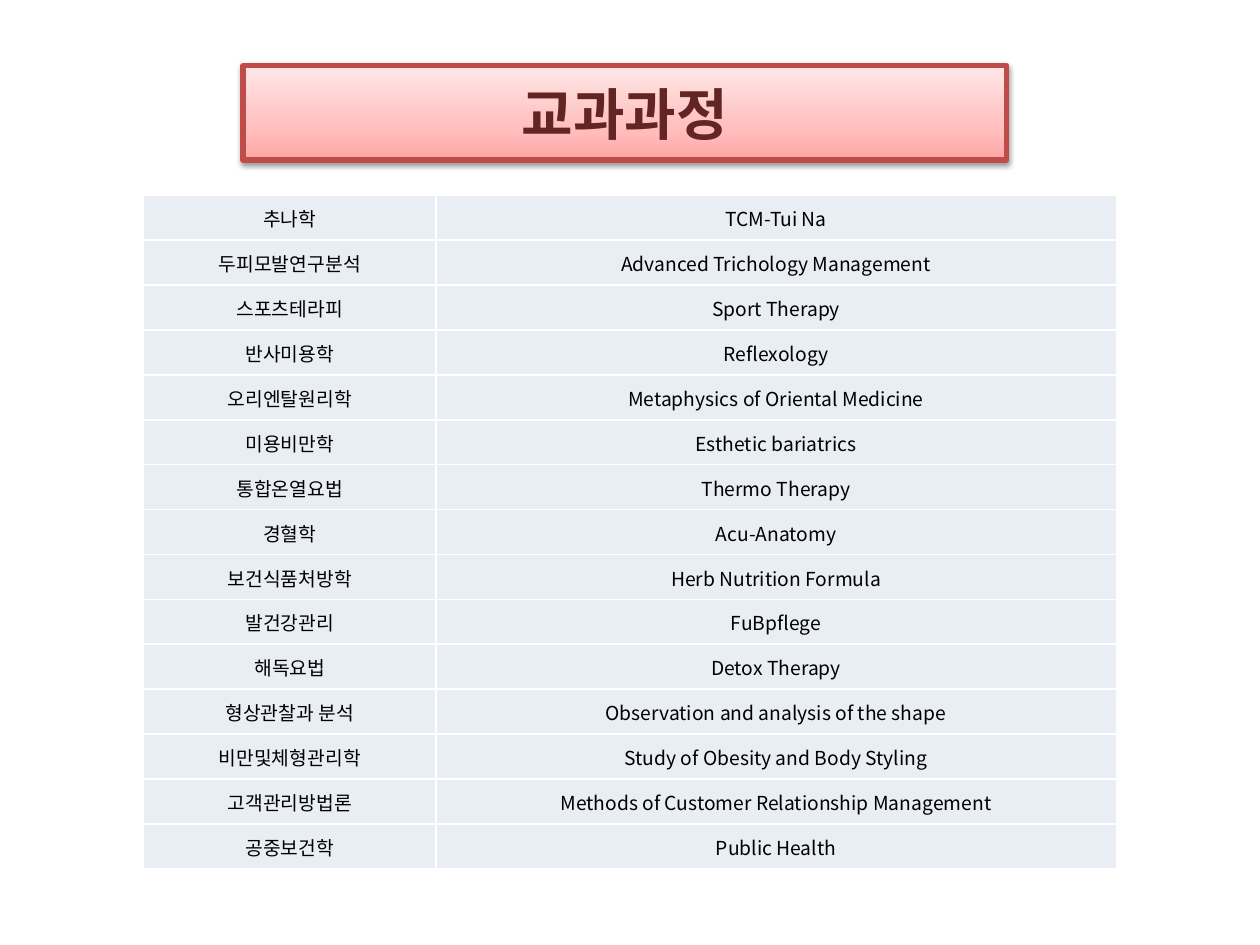
from dataclasses import dataclass

from lxml import etree
from pptx import Presentation
from pptx.dml.color import RGBColor
from pptx.enum import shapes, text
from pptx.oxml import parse_xml
from pptx.oxml.ns import nsdecls, qn
from pptx.util import Inches, Pt


@dataclass(frozen=True)
class Theme:
    font: str = "Noto Sans CJK KR"
    head: str = "632523"
    body: str = "000000"
    edge: str = "BF4C48"
    cell: str = "E9EDF4"
    rule: str = "FFFFFF"
    shade: str = "000000"
    fade: tuple = ((0, "FFA6A5"), (35, "FFC0BF"), (100, "FFE7E7"))
    big: int = 32
    small: int = 11


theme = Theme()
courses = [
    ("추나학", "TCM-Tui Na"),
    ("두피모발연구분석", "Advanced Trichology Management"),
    ("스포츠테라피", "Sport Therapy"),
    ("반사미용학", "Reflexology"),
    ("오리엔탈원리학", "Metaphysics of Oriental Medicine"),
    ("미용비만학", "Esthetic bariatrics"),
    ("통합온열요법", "Thermo Therapy"),
    ("경혈학", "Acu-Anatomy"),
    ("보건식품처방학", "Herb Nutrition Formula"),
    ("발건강관리", "FuBpflege"),
    ("해독요법", "Detox Therapy"),
    ("형상관찰과 분석", "Observation and analysis of the shape"),
    ("비만및체형관리학", "Study of Obesity and Body Styling"),
    ("고객관리방법론", "Methods of Customer Relationship Management"),
    ("공중보건학", "Public Health"),
]


def write(frame, words, size, color, bold=False):
    """Put one centred run, in the Latin and East Asian font, into a frame."""
    para = frame.paragraphs[0]
    para.alignment = text.PP_ALIGN.CENTER
    run = para.add_run()
    run.text = words
    run.font.name = theme.font
    run.font.size = Pt(size)
    run.font.bold = bold
    run.font.color.rgb = RGBColor.from_string(color)
    etree.SubElement(run.font._element, qn("a:ea"), typeface=theme.font)


deck = Presentation()
deck.slide_width, deck.slide_height = Inches(10), Inches(7.5)
slide = deck.slides.add_slide(deck.slide_layouts[6])

# Title bar
bar = slide.shapes.add_shape(
    shapes.MSO_SHAPE.RECTANGLE, Inches(1.93), Inches(0.52), Inches(6.06), Inches(0.75))
bar.line.color.rgb = RGBColor.from_string(theme.edge)
bar.line.width = Pt(3)
bar.text_frame.word_wrap = False
bar.text_frame.vertical_anchor = text.MSO_ANCHOR.MIDDLE
write(bar.text_frame, "교과과정", theme.big, theme.head, bold=True)

stops = "".join(
    f'<a:gs pos="{pos * 1000}"><a:srgbClr val="{color}"/></a:gs>'
    for pos, color in theme.fade)
props = bar._element.spPr
props.find(qn("a:prstGeom")).addnext(parse_xml(
    f'<a:gradFill {nsdecls("a")} rotWithShape="1"><a:gsLst>{stops}</a:gsLst>'
    '<a:lin ang="16200000" scaled="1"/></a:gradFill>'))
props.append(parse_xml(
    f'<a:effectLst {nsdecls("a")}>'
    f'<a:outerShdw blurRad="{Pt(3.1)}" dist="{Pt(1.6)}" dir="5400000" rotWithShape="0">'
    f'<a:srgbClr val="{theme.shade}"><a:alpha val="38000"/></a:srgbClr>'
    '</a:outerShdw></a:effectLst>'))

# Course table
grid = slide.shapes.add_table(
    len(courses), 2, Inches(1.14), Inches(1.55), Inches(7.72), Inches(5.35)).table
grid.first_row = grid.horz_banding = False
for col, width in zip(grid.columns, (2.32, 5.4)):
    col.width = Inches(width)

for row, names in zip(grid.rows, courses):
    for cell, name in zip(row.cells, names):
        cell.margin_left = cell.margin_right = cell.margin_top = Inches(0.01)
        cell.margin_bottom = 0
        cell.vertical_anchor = text.MSO_ANCHOR.MIDDLE
        write(cell.text_frame, name, theme.small, theme.body)
        for side in ("lnL", "lnR", "lnT", "lnB"):
            cell._tc.tcPr.append(parse_xml(
                f'<a:{side} {nsdecls("a")} w="{Pt(1)}"><a:solidFill>'
                f'<a:srgbClr val="{theme.rule}"/></a:solidFill></a:{side}>'))
        cell.fill.solid()
        cell.fill.fore_color.rgb = RGBColor.from_string(theme.cell)

deck.save("out.pptx")
